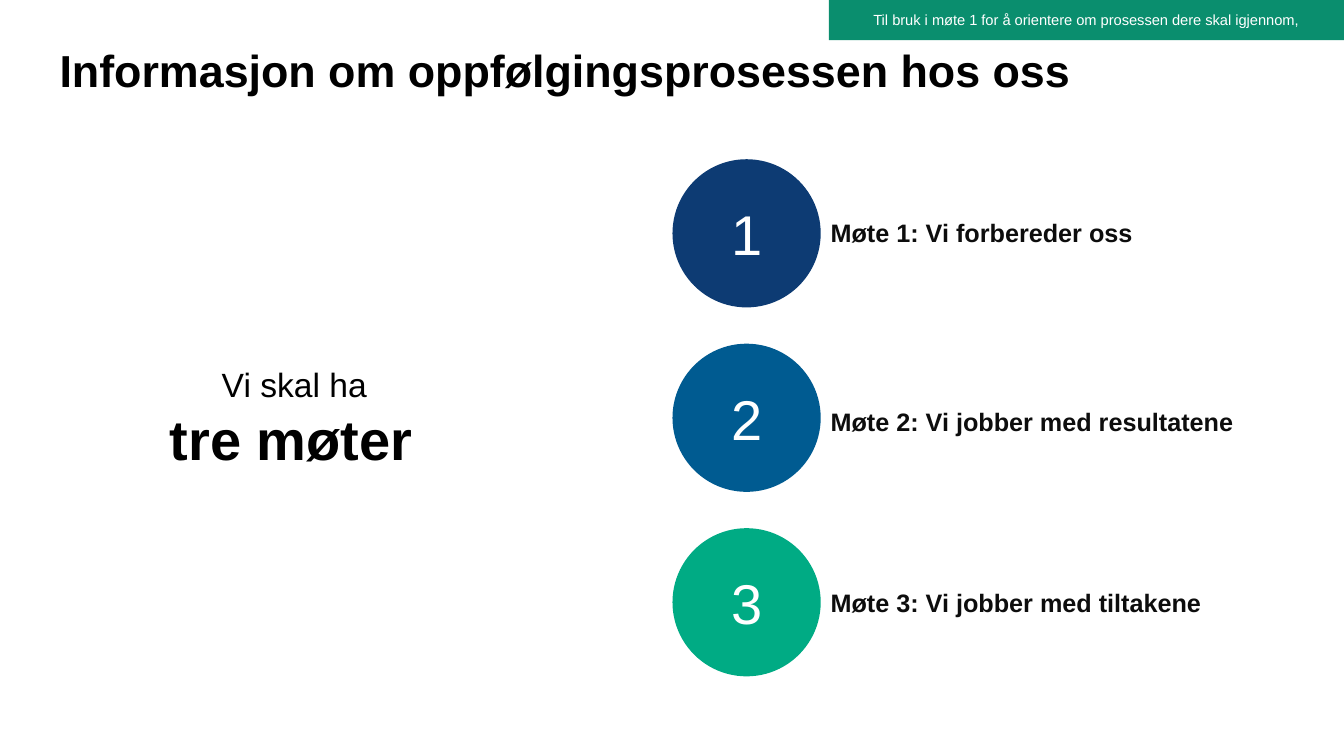
from pptx import Presentation
from pptx.dml.color import RGBColor
from pptx.enum import shapes, text
from pptx.util import Inches, Pt

COLORS = {
    "black": "000000", "label": "0D0D0D", "white": "FFFFFF", "banner": "0A8E6E",
    "navy": "0D3B73", "blue": "005B91", "green": "00AB84",
}
MEETINGS = [
    ("Møte 1: Vi forbereder oss", "navy", 2.11, 3.23),
    ("Møte 2: Vi jobber med resultatene", "blue", 3.98, 4.24),
    ("Møte 3: Vi jobber med tiltakene", "green", 5.78, 3.91),
]
CIRCLE_LEFT, CIRCLE_TOP, CIRCLE_SIZE, CIRCLE_STEP = 6.67, 1.58, 1.47, 1.83


def style(paragraph, size, color, bold=False, align=text.PP_ALIGN.CENTER):
    paragraph.alignment = align
    font = paragraph.font
    font.name, font.size, font.bold = "Arial", Pt(size), bold
    font.color.rgb = RGBColor.from_string(COLORS[color])


def add_filled(kind, left, top, width, height, fill, words, size):
    """Add a borderless shape with centred white text."""
    shape = slide.shapes.add_shape(
        kind, Inches(left), Inches(top), Inches(width), Inches(height))
    shape.shadow.inherit = False
    shape.fill.solid()
    shape.fill.fore_color.rgb = RGBColor.from_string(COLORS[fill])
    shape.line.fill.background()
    frame = shape.text_frame
    frame.vertical_anchor = text.MSO_ANCHOR.MIDDLE
    frame.text = words
    style(frame.paragraphs[0], size, "white")


prs = Presentation()
prs.slide_width, prs.slide_height = Inches(13.33), Inches(7.5)
slide = prs.slides.add_slide(prs.slide_layouts[5])

# Title
title = slide.shapes.title
title.left, title.top = Inches(0.59), Inches(0.48)
title.width, title.height = Inches(12.14), Inches(0.77)
heading = title.text_frame
heading.margin_left = heading.margin_right = 0
heading.margin_top = heading.margin_bottom = 0
heading.vertical_anchor = text.MSO_ANCHOR.TOP
heading.auto_size = text.MSO_AUTO_SIZE.NONE
heading.text = "Informasjon om oppfølgingsprosessen hos oss"
heading.paragraphs[0].line_spacing = 0.9
style(heading.paragraphs[0], 32, "black", True, text.PP_ALIGN.LEFT)

# Numbered meetings
for index, (meeting, fill, label_top, label_width) in enumerate(MEETINGS):
    add_filled(shapes.MSO_SHAPE.OVAL, CIRCLE_LEFT, CIRCLE_TOP + index * CIRCLE_STEP,
               CIRCLE_SIZE, CIRCLE_SIZE, fill, str(index + 1), 40)
    label = slide.shapes.add_textbox(
        Inches(CIRCLE_LEFT + CIRCLE_SIZE), Inches(label_top),
        Inches(label_width), Inches(0.4)).text_frame
    label.word_wrap = False
    label.auto_size = text.MSO_AUTO_SIZE.SHAPE_TO_FIT_TEXT
    label.text = meeting
    style(label.paragraphs[0], 18, "label", True, text.PP_ALIGN.LEFT)

# Usage banner
add_filled(shapes.MSO_SHAPE.RECTANGLE, 8.22, 0, 5.11, 0.4, "banner",
           "Til bruk i møte 1 for å orientere om prosessen dere skal igjennom,", 10.5)

# Summary on the left
summary = slide.shapes.add_textbox(
    Inches(1.57), Inches(3.56), Inches(2.79), Inches(1.18)).text_frame
summary.word_wrap = False
summary.auto_size = text.MSO_AUTO_SIZE.SHAPE_TO_FIT_TEXT
summary.text = "Vi skal ha \ntre møter "
style(summary.paragraphs[0], 24, "black")
style(summary.paragraphs[1], 40, "black", True)

prs.save("out.pptx")
